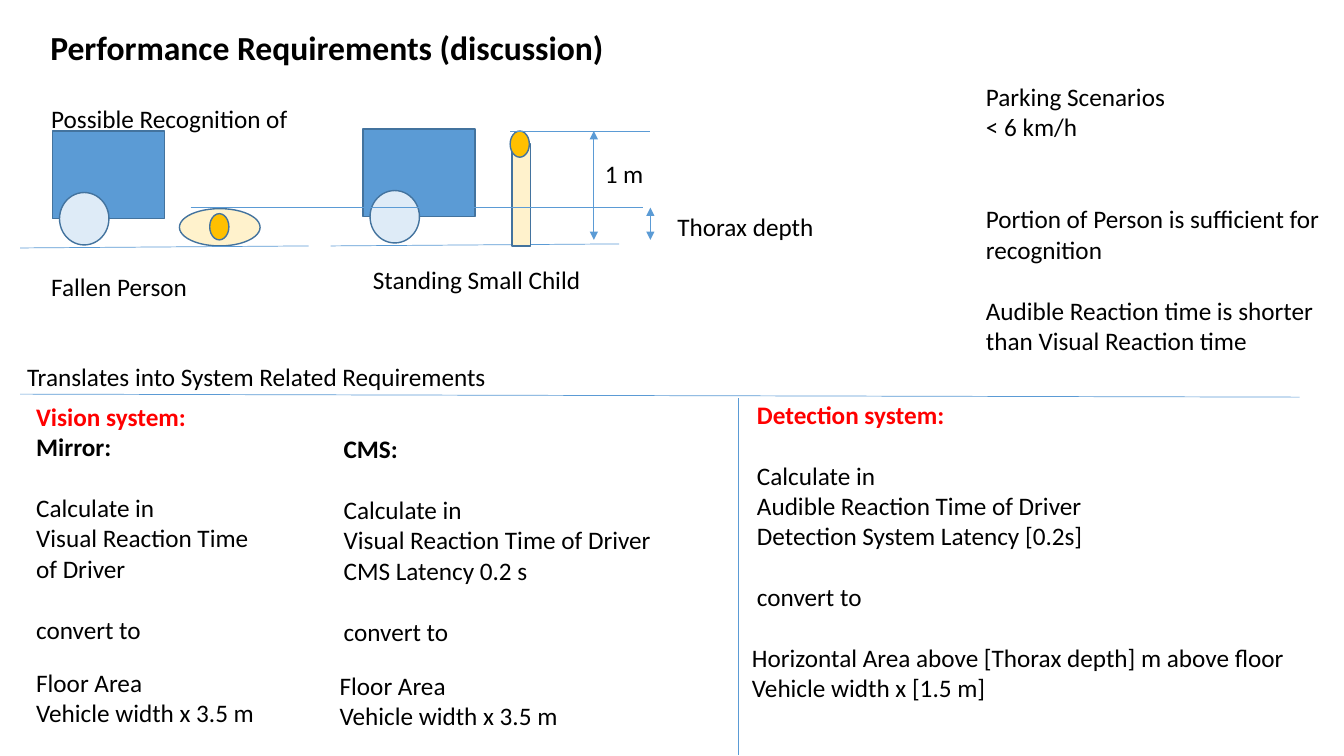
from pptx import Presentation
from pptx.dml.color import RGBColor
from pptx.enum.shapes import MSO_CONNECTOR, MSO_SHAPE
from pptx.enum.text import MSO_ANCHOR
from pptx.oxml.ns import qn
from pptx.util import Pt
from lxml import etree

PX = 9144  # 100 px to the inch
LINE_HEIGHT = 22  # points, one line of 18 pt text
FONT = "Calibri"
RECT, OVAL = MSO_SHAPE.RECTANGLE, MSO_SHAPE.OVAL
STRAIGHT = MSO_CONNECTOR.STRAIGHT
TOP = MSO_ANCHOR.TOP
COLORS = {
    "text": "000000",
    "accent": "FF0000",
    "line": "5B9BD5",
    "outline": "43739E",
    "vehicle": "5B9BD5",
    "wheel": "DEEBF7",
    "body": "FFF2CC",
    "head": "FFC000",
}


def rgb(name):
    return RGBColor.from_string(COLORS[name])


def add_text(slide, box, lines, size=18, color="text", bold=False,
             lead_color=None, lead_bold=None, gaps=None, wrap=False):
    """Lead settings format the first line; gaps maps line index to empty lines above."""
    frame = slide.shapes.add_textbox(*(v * PX for v in box)).text_frame
    frame.word_wrap = wrap
    frame.vertical_anchor = TOP
    for i, line in enumerate(lines):
        paragraph = frame.paragraphs[0] if i == 0 else frame.add_paragraph()
        if gaps and i in gaps:
            paragraph.space_before = Pt(gaps[i] * LINE_HEIGHT)
        run = paragraph.add_run()
        run.text = line
        run.font.name = FONT
        run.font.size = Pt(size)
        run.font.bold = lead_bold if i == 0 and lead_bold is not None else bold
        run.font.color.rgb = rgb(lead_color if i == 0 and lead_color else color)


def add_part(slide, preset, box, fill):
    part = slide.shapes.add_shape(preset, *(v * PX for v in box))
    part.shadow.inherit = False
    part.fill.solid()
    part.fill.fore_color.rgb = rgb(fill)
    part.line.color.rgb = rgb("outline")
    part.line.width = Pt(1)


def add_line(slide, start, end, arrows=False):
    line = slide.shapes.add_connector(STRAIGHT, *(v * PX for v in (*start, *end)))
    line.line.color.rgb = rgb("line")
    line.line.width = Pt(0.5)
    properties = line._element.spPr
    if arrows:
        outline = properties.find(qn("a:ln"))
        for tag in ("a:headEnd", "a:tailEnd"):
            etree.SubElement(outline, qn(tag), type="triangle")
    etree.SubElement(properties, qn("a:effectLst"))


def vehicle(slide, left, top):
    add_part(slide, RECT, (left + 32, top, 111, 87), "vehicle")
    add_part(slide, OVAL, (left + 39, top + 61, 49, 52), "wheel")
    add_line(slide, (left, top + 116), (left + 286, top + 114))


def recognition(slide, box):
    left, top, width, height = box
    # Fallen person behind the first vehicle
    add_part(slide, OVAL, (left + 158, top + 109, 80, 37), "body")
    add_part(slide, OVAL, (left + 188, top + 114, 19, 26), "head")
    vehicle(slide, left, top + 32)
    # Standing child behind the second vehicle
    vehicle(slide, left + 308, top + 30)
    add_part(slide, RECT, (left + 488, top + 45, 18, 101), "body")
    add_part(slide, OVAL, (left + 486, top + 32, 19, 26), "head")
    # Dimension lines
    child, thorax, floor = top + 32, top + 108, top + 140
    add_line(slide, (left + 486, child), (left + 625, child))
    add_line(slide, (left + 169, thorax), (left + 618, thorax))
    add_line(slide, (left + 625, thorax), (left + 625, floor), arrows=True)
    add_line(slide, (left + 569, child), (left + 569, floor), arrows=True)
    # Labels
    for x, y, w, label in (
        (21, 0, 257, "Possible Recognition of"),
        (21, 166, 156, "Fallen Person"),
        (340, 159, 228, "Standing Small Child"),
        (570, 54, 59, "1 m"),
        (642, 107, 177, "Thorax depth"),
    ):
        add_text(slide, (left + x, top + y, w, 40), [label])


def parking_notes(slide, box):
    add_text(slide, box, [
        "Parking Scenarios",
        "< 6 km/h",
        "Portion of Person is sufficient for recognition",
        "Audible Reaction time is shorter than Visual Reaction time",
    ], gaps={2: 2, 3: 1}, wrap=True)


def system_requirements(slide, box):
    left, top, width, height = box
    # Heading and dividers
    add_text(slide, (left - 3, top, 480, 40),
             ["Translates into System Related Requirements"])
    add_line(slide, (left, top + 37), (left + width, top + 40))
    add_line(slide, (left + 712, top + 41), (left + 712, top + height))
    # Vision systems
    add_text(slide, (left + 6, top + 39, 170, 40), ["Vision system:"],
             color="accent", bold=True)
    add_text(slide, (left + 6, top + 69, 245, 252),
             ["Mirror:", "Calculate in", "Visual Reaction Time", "of Driver",
              "convert to"], lead_bold=True, gaps={1: 1, 4: 1})
    add_text(slide, (left + 311, top + 71, 334, 222),
             ["CMS:", "Calculate in", "Visual Reaction Time of Driver",
              "CMS Latency 0.2 s", "convert to"],
             lead_bold=True, gaps={1: 1, 4: 1})
    for x, y in ((6, 303), (307, 306)):
        add_text(slide, (left + x, top + y, 239, 71),
                 ["Floor Area", "Vehicle width x 3.5 m"])
    # Detection system
    add_text(slide, (left + 721, top + 37, 346, 222),
             ["Detection system:", "Calculate in",
              "Audible Reaction Time of Driver",
              "Detection System Latency [0.2s]", "convert to"],
             lead_color="accent", lead_bold=True, gaps={1: 1, 4: 1})
    add_text(slide, (left + 716, top + 278, 560, 71),
             ["Horizontal Area above [Thorax depth] m above floor",
              "Vehicle width x [1.5 m]"])


def main():
    deck = Presentation()
    deck.slide_width, deck.slide_height = 1333 * PX, 750 * PX
    slide = deck.slides.add_slide(deck.slide_layouts[6])
    add_text(slide, (40, 22, 575, 50), ["Performance Requirements (discussion)"],
             size=24, bold=True)
    recognition(slide, (20, 98, 819, 206))
    parking_notes(slide, (968, 76, 352, 283))
    system_requirements(slide, (20, 354, 1269, 395))
    deck.save("out.pptx")


if __name__ == "__main__":
    main()
